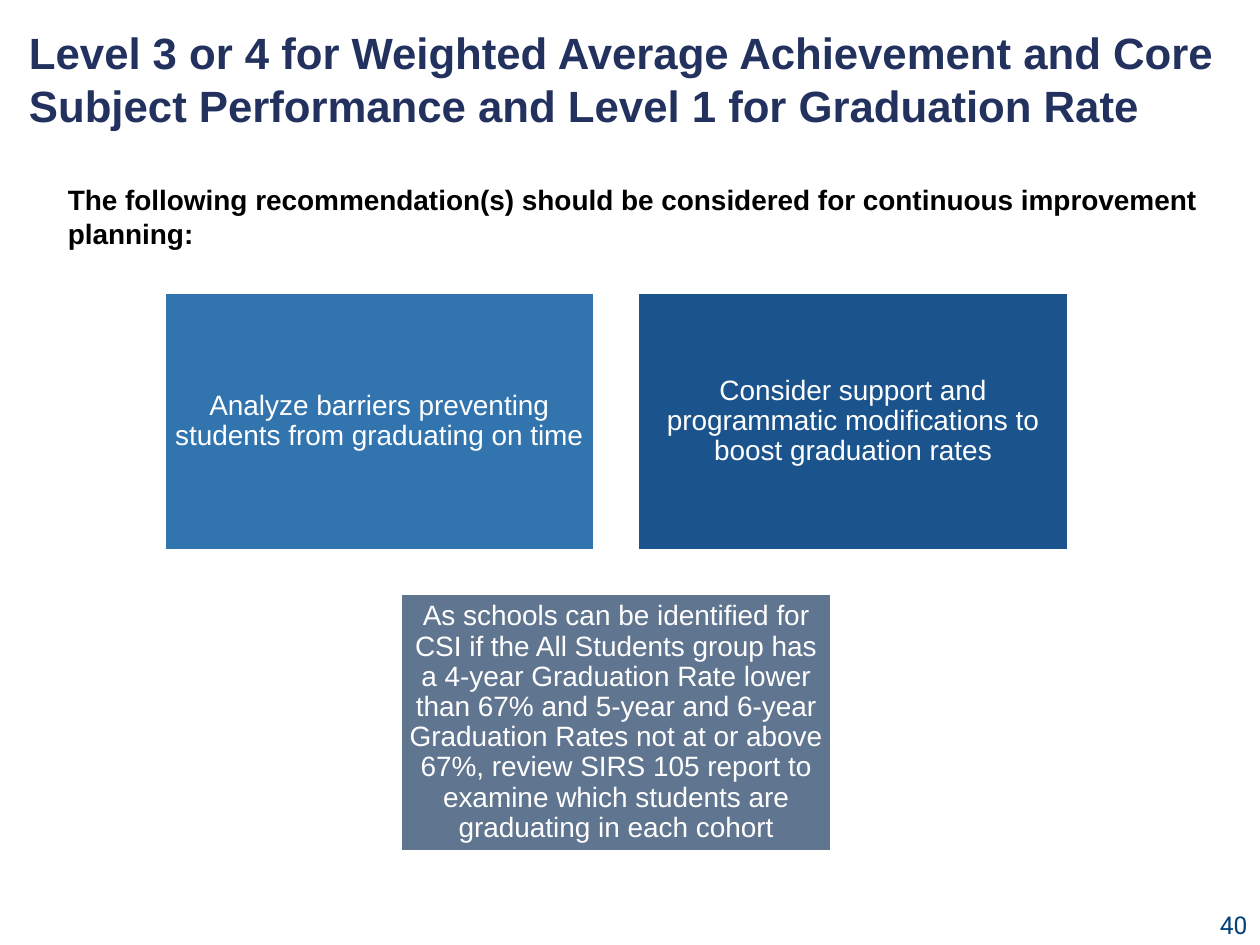
from pptx import Presentation
from pptx.dml.color import RGBColor
from pptx.enum.shapes import MSO_SHAPE
from pptx.enum.text import MSO_ANCHOR, MSO_AUTO_SIZE, PP_ALIGN
from pptx.util import Inches, Pt

RECT = MSO_SHAPE.RECTANGLE
TOP, MIDDLE = MSO_ANCHOR.TOP, MSO_ANCHOR.MIDDLE
LEFT, CENTER, RIGHT = PP_ALIGN.LEFT, PP_ALIGN.CENTER, PP_ALIGN.RIGHT

# Content
TITLE = ("Level 3 or 4 for Weighted Average Achievement and Core Subject "
         "Performance and Level 1 for Graduation Rate")
INTRO = ("The following recommendation(s) should be considered for "
         "continuous improvement planning:")
PAGE_NUMBER = "40"
RECOMMENDATIONS = [  # rows of (text, fill)
    [("Analyze barriers preventing students from graduating on time", "3274AE"),
     ("Consider support and programmatic modifications to boost graduation rates",
      "1B548D")],
    [("As schools can be identified for CSI if the All Students group has a 4-year "
      "Graduation Rate lower than 67% and 5-year and 6-year Graduation Rates not at "
      "or above 67%, review SIRS 105 report to examine which students are "
      "graduating in each cohort", "607590")],
]

# Theme: type styles and the card outline
THEME = {
    "title": {"name": "Arial", "size": 25, "bold": True, "color": "22315E"},
    "intro": {"name": "Arial", "size": 16, "bold": True, "color": "000000"},
    "card": {"name": "Arial", "size": 16, "bold": False, "color": "FFFFFF"},
    "page": {"name": "Roboto", "size": 14, "bold": False, "color": "044178"},
    "outline": "FFFFFF",
}

# Card grid, in inches: each row is centred on the same axis
CARD_W, CARD_H, GAP = 3.42, 2.05, 0.34
GRID_CENTER, GRID_TOP = 4.89, 2.32
CARD_INSET = 0.07


def set_text(sp, text, style, align=LEFT, anchor=TOP):
    tf = sp.text_frame
    tf.word_wrap = True
    tf.auto_size = MSO_AUTO_SIZE.NONE
    tf.vertical_anchor = anchor
    p = tf.paragraphs[0]
    p.alignment = align
    r = p.add_run()
    r.text = text
    look = THEME[style]
    values = {"name": look["name"], "size": Pt(look["size"]), "bold": look["bold"]}
    for key, value in values.items():
        setattr(r.font, key, value)
    r.font.color.rgb = RGBColor.from_string(look["color"])
    return tf


def add_card(s, x, y, text, fill):
    sp = s.shapes.add_shape(RECT, *map(Inches, (x, y, CARD_W, CARD_H)))
    sp.shadow.inherit = False
    sp.fill.solid()
    sp.fill.fore_color.rgb = RGBColor.from_string(fill)
    sp.line.color.rgb = RGBColor.from_string(THEME["outline"])
    sp.line.width = Pt(2)
    tf = set_text(sp, text, "card", CENTER, MIDDLE)
    tf.paragraphs[0].line_spacing = 0.9
    for side in ("left", "top", "right", "bottom"):
        setattr(tf, f"margin_{side}", Inches(CARD_INSET))


def main():
    prs = Presentation()
    prs.slide_width, prs.slide_height = Inches(10), Inches(7.5)
    s = prs.slides.add_slide(prs.slide_layouts.get_by_name("Title Only"))

    # Title
    title = s.shapes.title
    title.left, title.top, title.width, title.height = map(
        Inches, (0.13, 0.25, 9.87, 0.75))
    set_text(title, TITLE, "title", anchor=MIDDLE)

    # Introduction and page number
    intro = s.shapes.add_textbox(*map(Inches, (0.44, 1.4, 9.28, 0.64)))
    set_text(intro, INTRO, "intro")
    page = s.shapes.add_textbox(*map(Inches, (7.67, 7.17, 2.33, 0.33)))
    set_text(page, PAGE_NUMBER, "page", RIGHT)

    # Recommendation cards
    for i, row in enumerate(RECOMMENDATIONS):
        row_width = len(row) * (CARD_W + GAP) - GAP
        for j, (text, fill) in enumerate(row):
            x = GRID_CENTER - row_width / 2 + j * (CARD_W + GAP)
            add_card(s, x, GRID_TOP + i * (CARD_H + GAP), text, fill)

    prs.save("out.pptx")


if __name__ == "__main__":
    main()
